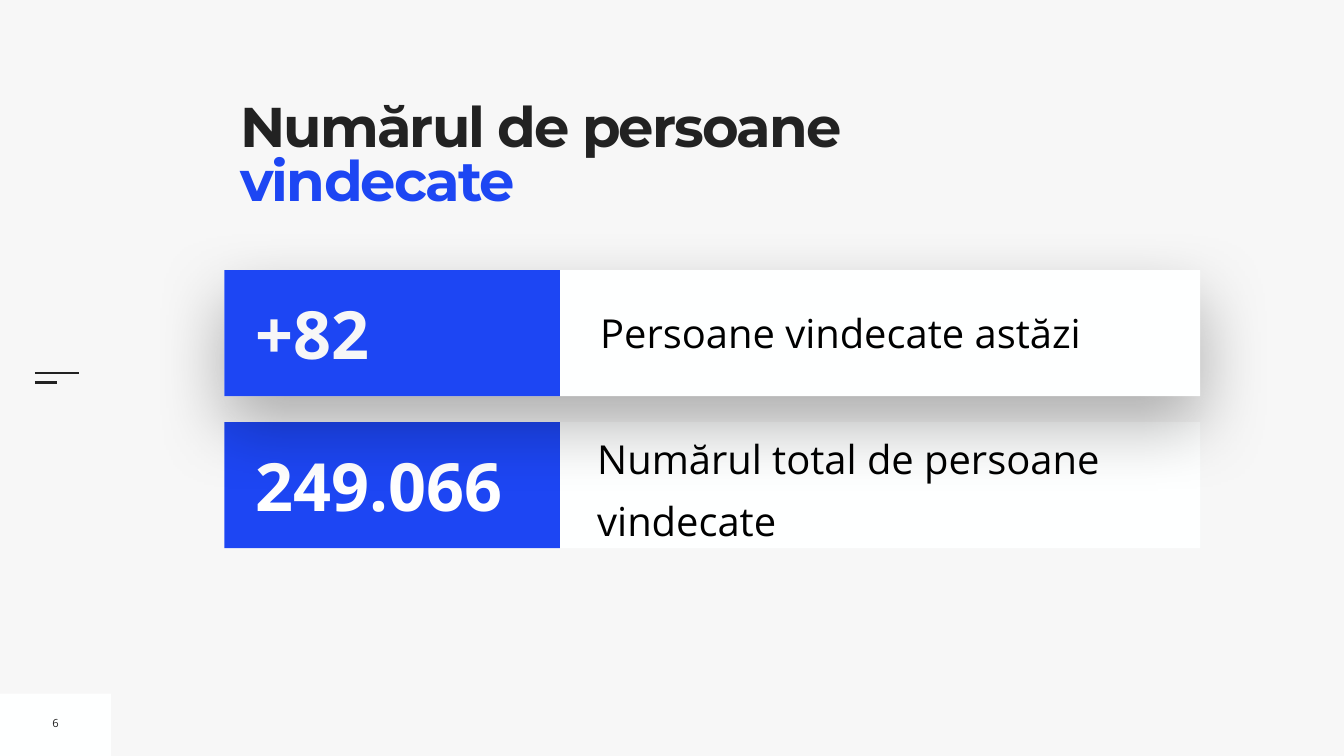
from pptx import Presentation
from pptx.dml.color import RGBColor
from pptx.enum.shapes import MSO_CONNECTOR, MSO_SHAPE
from pptx.enum.text import MSO_ANCHOR, MSO_AUTO_SIZE, PP_ALIGN
from pptx.oxml import parse_xml
from pptx.oxml.ns import nsdecls
from pptx.util import Pt

RECTANGLE = MSO_SHAPE.RECTANGLE
STRAIGHT = MSO_CONNECTOR.STRAIGHT
TOP, MIDDLE = MSO_ANCHOR.TOP, MSO_ANCHOR.MIDDLE
LEFT, CENTER = PP_ALIGN.LEFT, PP_ALIGN.CENTER
NO_FIT, GROW = MSO_AUTO_SIZE.NONE, MSO_AUTO_SIZE.SHAPE_TO_FIT_TEXT

PAPER, WHITE, NEAR_WHITE = "F7F7F7", "FFFFFF", "FEFFFF"
INK, BLACK, BLUE = "222222", "000000", "1D46F3"
HEADING, BODY = "Montserrat", "Open Sans"


def rgb(value):
    return RGBColor.from_string(value)


class SlideBuilder:
    """Holds the style and the slide being built."""

    def __init__(self, slide):
        self.slide = slide
        slide.background.fill.solid()
        slide.background.fill.fore_color.rgb = rgb(PAPER)

    def style(self, run, size, color, font=BODY, bold=False):
        run.font.name = font
        run.font.size = Pt(size)
        run.font.bold = bold
        run.font.color.rgb = rgb(color)

    def frame(self, shape, inset, anchor, fit, wrap=True):
        frame = shape.text_frame
        frame.margin_left = frame.margin_right = Pt(inset)
        frame.margin_top = frame.margin_bottom = Pt(inset)
        frame.vertical_anchor = anchor
        frame.word_wrap = wrap
        frame.auto_size = fit
        return frame

    def title(self, box, parts):
        heading = self.slide.shapes.title
        heading.left, heading.top, heading.width, heading.height = map(Pt, box)
        heading.fill.solid()
        heading.fill.fore_color.rgb = rgb(PAPER)
        paragraph = self.frame(heading, 0, TOP, NO_FIT).paragraphs[0]
        paragraph.alignment = LEFT
        paragraph.line_spacing = 0.8
        for words, color in parts:
            run = paragraph.add_run()
            run.text = words
            self.style(run, 80, color, HEADING, True)
            run.font._element.set("spc", "-270")

    def block(self, box, color, raised=False):
        block = self.slide.shapes.add_shape(RECTANGLE, *map(Pt, box))
        block.shadow.inherit = False
        block.fill.solid()
        block.fill.fore_color.rgb = rgb(color)
        block.line.fill.background()
        if raised:
            effects = block._element.spPr.find(
                "{http://schemas.openxmlformats.org/drawingml/2006/main}effectLst")
            effects.append(parse_xml(
                f'<a:outerShdw {nsdecls("a")} blurRad="{Pt(100)}" dist="{Pt(40)}" '
                'dir="5400000" rotWithShape="0"><a:srgbClr val="000000">'
                '<a:alpha val="30000"/></a:srgbClr></a:outerShdw>'))

    def text(self, box, words, size, color, bold=False, inset=7.2,
             align=LEFT, wrap=True, spacing=None, before=None):
        label = self.slide.shapes.add_textbox(*map(Pt, box))
        paragraph = self.frame(label, inset, MIDDLE, GROW, wrap).paragraphs[0]
        paragraph.text = words
        paragraph.alignment = align
        if spacing:
            paragraph.line_spacing = spacing
        if before:
            paragraph.space_before = Pt(before)
        self.style(paragraph.runs[0], size, color, bold=bold)

    def rule(self, left, y, length):
        rule = self.slide.shapes.add_connector(
            STRAIGHT, Pt(left), Pt(y), Pt(left + length), Pt(y))
        rule.line.color.rgb = rgb(INK)
        rule.line.width = Pt(3)
        rule._element.spPr.append(parse_xml(f'<a:effectLst {nsdecls("a")}/>'))

    def statistic(self, top, figure, color, caption, caption_box,
                  raised=False, **caption_style):
        left, height = 320.4, 180
        self.block((left, top, 1394, height), NEAR_WHITE, raised)
        self.text(caption_box, caption, 57, BLACK, **caption_style)
        self.block((left, top, 479.5, height), BLUE)
        self.text((358.6, top + 25, 434, 130), figure, 95, color, bold=True)


def main():
    deck = Presentation()
    deck.slide_width, deck.slide_height = Pt(1920), Pt(1080)
    page = SlideBuilder(deck.slides.add_slide(deck.slide_layouts[5]))

    page.block((0, 991, 158.4, 89), NEAR_WHITE)
    page.rule(49.7, 533.5, 63.4)
    page.rule(49.7, 546.5, 31.7)
    page.title((343.4, 149, 936.7, 196.6),
               [("Numărul de persoane ", INK), ("vindecate", BLUE)])
    page.text((67, 1014.5, 24.5, 36.7), "6", 16, INK, align=CENTER, wrap=False)

    page.statistic(603, "249.066", WHITE, "Numărul total de persoane vindecate",
                   (853.2, 604, 860.4, 170), inset=0, spacing=1.3, before=20)
    page.statistic(386, "+82", PAPER, "Persoane vindecate astăzi",
                   (850.3, 434, 846.7, 83.5), raised=True)

    deck.save("out.pptx")


if __name__ == "__main__":
    main()
